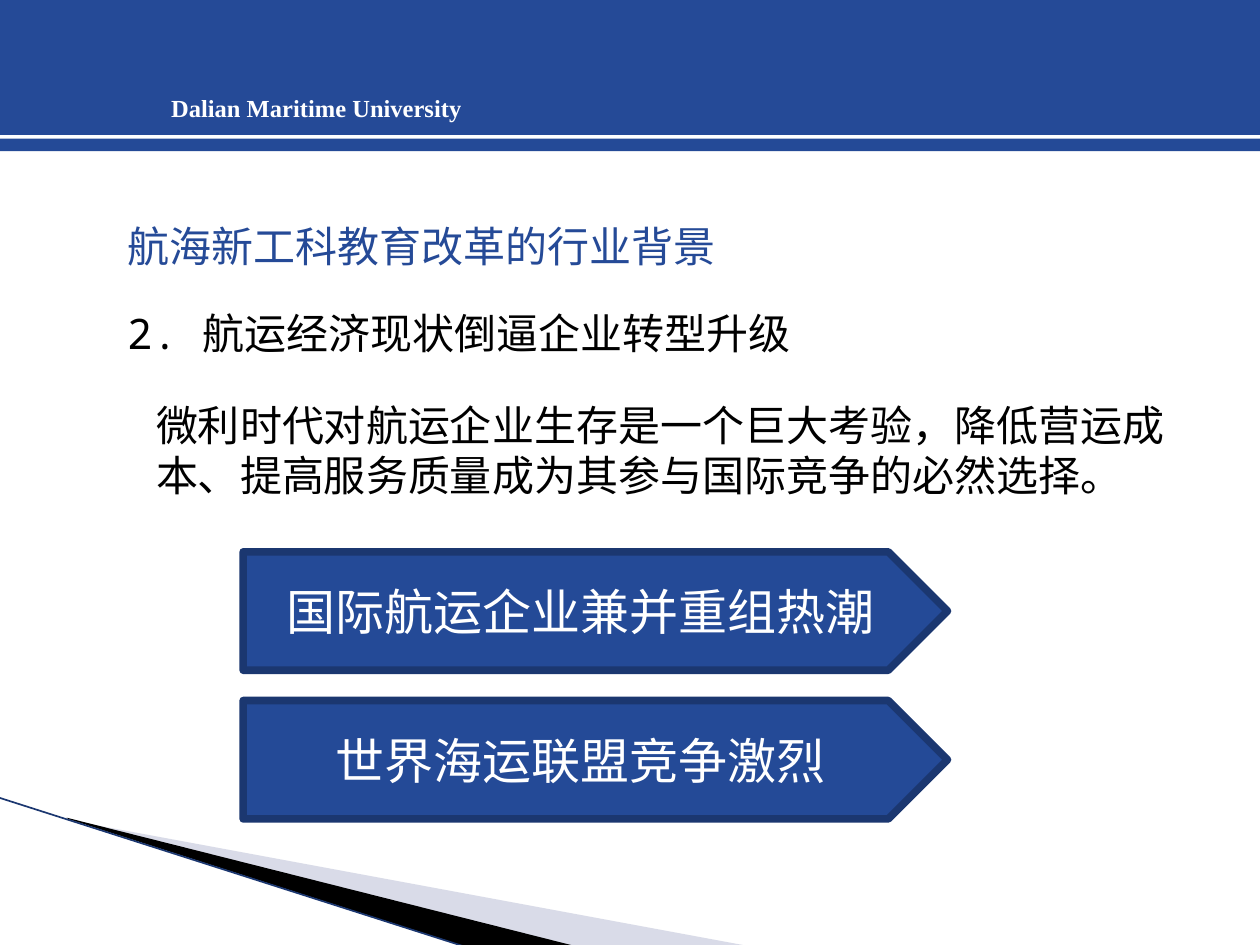
"""Builds a slide on the shipping background of maritime teaching reform."""
import pptx
import pptx.util
import pptx.dml.color
import pptx.enum.shapes
import pptx.enum.text
import pptx.oxml.ns
import lxml.etree

Inches = pptx.util.Inches
Pt = pptx.util.Pt
SHAPE = pptx.enum.shapes.MSO_SHAPE
HUES = {"blue": "254A97", "plate": "244A97", "edge": "1B3770", "pale": "A1A7C6",
        "black": "000000", "white": "FFFFFF"}
MONO = "Noto Sans Mono"

deck = pptx.Presentation()
deck.slide_width, deck.slide_height = Inches(10), Inches(7.5)
slide = deck.slides.add_slide(deck.slide_layouts[6])
shapes = slide.shapes


def paint(fill, hue):
    fill.solid()
    fill.fore_color.rgb = pptx.dml.color.RGBColor.from_string(HUES[hue])


def write(para, text, size, hue, face=MONO):
    run = para.add_run()
    run.text = text
    run.font.size = Pt(size)
    run.font.name = face
    paint(run.font.fill, hue)
    east = lxml.etree.SubElement(run.font._element, pptx.oxml.ns.qn("a:ea"))
    east.set("typeface", face)
    return run


wedges = [
    ("pale", [(0.55, 6.51), (5.95, 7.51), (4.56, 7.51), (0.55, 6.5)]),
    ("black", [(0.53, 6.49), (4.57, 7.51), (3.72, 7.52), (0.54, 6.5)]),
]
for hue, spots in wedges:
    points = [(Inches(x), Inches(y)) for x, y in spots]
    pen = shapes.build_freeform(*points[0])
    pen.add_line_segments(points[1:], close=True)
    wedge = pen.convert_to_shape()
    wedge.shadow.inherit = False
    wedge.line.fill.background()
    paint(wedge.fill, hue)
    if hue == "pale":
        tint = wedge._element.spPr.find(".//" + pptx.oxml.ns.qn("a:srgbClr"))
        lxml.etree.SubElement(tint, pptx.oxml.ns.qn("a:alpha")).set("val", "40000")

rule = shapes.add_connector(pptx.enum.shapes.MSO_CONNECTOR.STRAIGHT,
                            Inches(-0.01), Inches(6.33), Inches(3.71), Inches(7.52))
paint(rule.line.fill, "edge")
rule.line.width = Pt(0.95)
lxml.etree.SubElement(rule._element.spPr, pptx.oxml.ns.qn("a:effectLst"))

for top, height, hue in [(-0.01, 1.08, "blue"), (1.1, 0.1, "plate")]:
    band = shapes.add_shape(SHAPE.RECTANGLE, 0, Inches(top), Inches(10), Inches(height))
    band.shadow.inherit = False
    band.line.fill.background()
    paint(band.fill, hue)

frames = []
for area in [(1.26, 0.69, 2.58, 0.33), (0.91, 1.7, 5.59, 1.21), (1.14, 3.12, 8.5, 0.91)]:
    frame = shapes.add_textbox(*map(Inches, area)).text_frame
    frame.word_wrap = True
    frames.append(frame)
school, head, body = frames

write(school.paragraphs[0], "Dalian Maritime University", 14, "white",
      "Times New Roman").font.bold = True
write(head.paragraphs[0], "航海新工科教育改革的行业背景", 24, "blue")
point = head.add_paragraph()
point.space_before = Pt(21)
point._p.get_or_add_pPr().set("marL", str(Inches(0.38)))
point._p.get_or_add_pPr().set("indent", str(Inches(-0.38)))
write(point, "2. 航运经济现状倒逼企业转型升级", 24, "black")
write(body.paragraphs[0],
      "微利时代对航运企业生存是一个巨大考验，降低营运成本、提高服务质量成为其参与国际竞争的必然选择。",
      24, "black")

for row, text in enumerate(["国际航运企业兼并重组热潮", "世界海运联盟竞争激烈"]):
    plate = shapes.add_shape(SHAPE.PENTAGON, Inches(1.93), Inches(4.38 + 1.18 * row),
                             Inches(5.59), Inches(0.94))
    plate.shadow.inherit = False
    paint(plate.fill, "plate")
    paint(plate.line.fill, "edge")
    plate.line.width = Pt(4.33)
    frame = plate.text_frame
    frame.vertical_anchor = pptx.enum.text.MSO_ANCHOR.MIDDLE
    para = frame.paragraphs[0]
    para.alignment = pptx.enum.text.PP_ALIGN.CENTER
    write(para, text, 28, "white")

deck.save("out.pptx")
